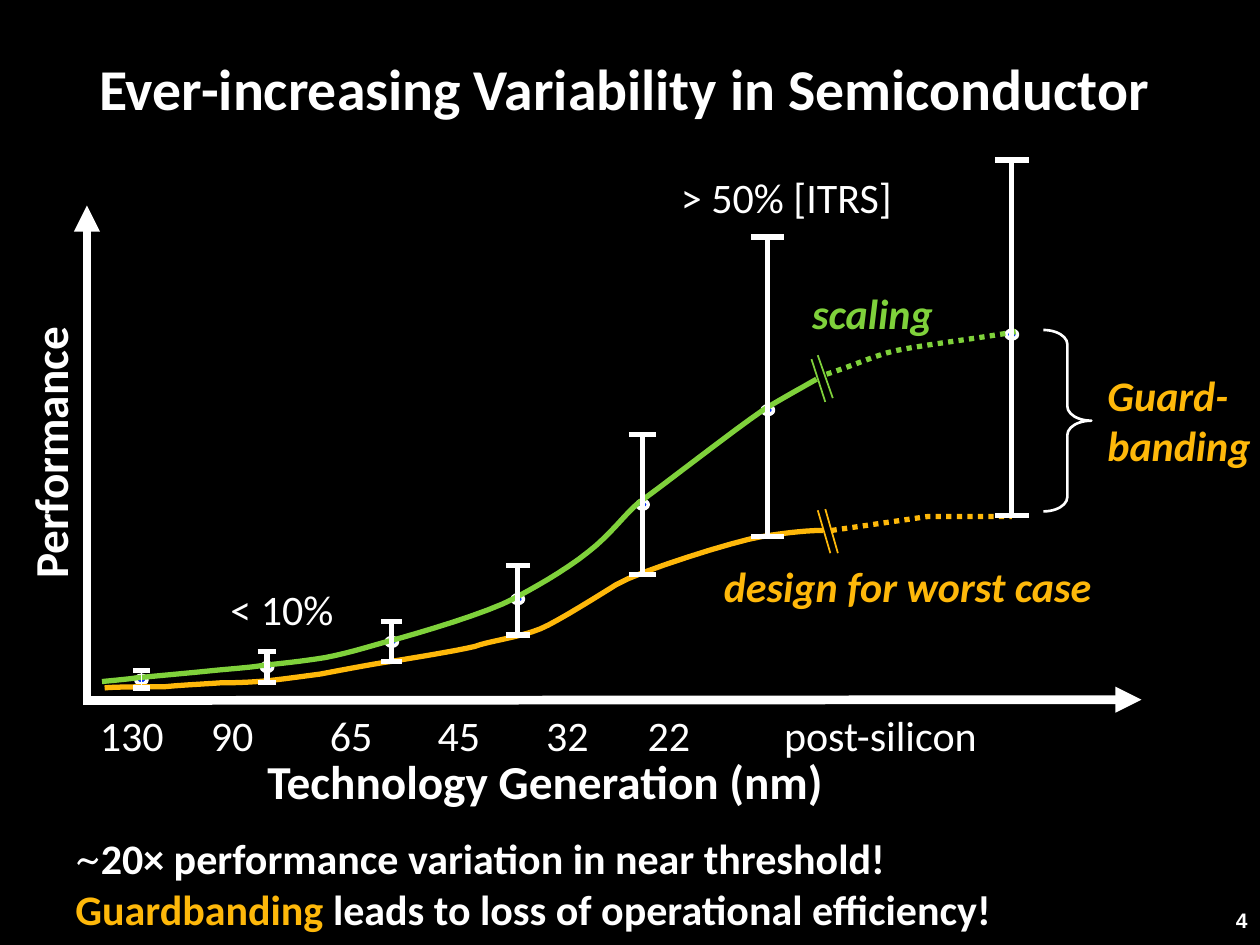
import pptx
import pptx.util
import pptx.dml.color
import pptx.enum.dml
import pptx.enum.shapes
import pptx.enum.text
import pptx.oxml
import pptx.oxml.ns

Pt = pptx.util.Pt
ALIGN = pptx.enum.text.PP_ALIGN
ANCHOR = pptx.enum.text.MSO_ANCHOR
SHAPE = pptx.enum.shapes.MSO_SHAPE

WHITE, ORANGE, GREEN, BLUE, BLACK = "FFFFFF", "FEB80A", "7FD13B", "0433FF", "000000"
FONT = "Calibri"
BOLD, SLANT = "b", "bi"

GENERATIONS = ["130", "90", "65", "45", "32", "22", "post-silicon"]
TAB_STOPS = [63.5, 131.5, 193, 255, 313, 391]

TEXTS = [
    dict(at=(49.7, 19.5, 620.6, 66), anchor=ANCHOR.MIDDLE, spacing=0.9,
         lines=[[("Ever-increasing Variability in Semiconductor", 33, WHITE, BOLD)]]),
    dict(at=(558, 511, 162, 29), anchor=ANCHOR.MIDDLE, align=ALIGN.RIGHT,
         lines=[[("4", 12, WHITE, BOLD, "Arial")]]),
    dict(at=(151, 430, 321, 32.4), anchor=ANCHOR.BOTTOM, align=ALIGN.CENTER, inset=False, wrap=False,
         lines=[[("Technology Generation (nm)", 27, WHITE, BOLD)]]),
    dict(at=(-44.6, 242.6, 145.4, 32.4), anchor=ANCHOR.BOTTOM, align=ALIGN.CENTER, inset=False,
         wrap=False, turn=270, lines=[[("Performance", 27, WHITE, BOLD)]]),
    dict(at=(57, 405.4, 505, 28.8), anchor=ANCHOR.BOTTOM, inset=False, tabs=TAB_STOPS,
         lines=[[("\t".join(GENERATIONS), 24, WHITE, "")]]),
    dict(at=(393, 320.4, 251.3, 28.8), anchor=ANCHOR.BOTTOM, align=ALIGN.CENTER, inset=False,
         lines=[[("design for worst case", 24, ORANGE, SLANT)]]),
    dict(at=(454.3, 164.2, 88.6, 28.8), anchor=ANCHOR.BOTTOM, align=ALIGN.CENTER, inset=False,
         lines=[[("scaling", 24, GREEN, SLANT)]]),
    dict(at=(36, 472.3, 615.6, 65.5),
         lines=[[("~", 24, WHITE, "", "TeX Gyre Adventor"),
                 ("20× performance variation in near threshold!", 24, WHITE, BOLD)],
                [("Guardbanding ", 24, ORANGE, BOLD),
                 ("leads to loss of operational efficiency!", 24, WHITE, BOLD)]]),
    dict(at=(124.6, 329.8, 85, 36), lines=[[("< 10%", 24, WHITE, "")]]),
    dict(at=(376.6, 94.3, 164.9, 36), lines=[[(" > 50% [ITRS]", 24, WHITE, "")]]),
    dict(at=(625.7, 207.4, 97.2, 65.5), wrap=False,
         lines=[[("Guard-", 24, ORANGE, SLANT)], [("banding", 24, ORANGE, SLANT)]]),
]

AXES = [((49.7, 117.4), (49.7, 400.3)), ((652.3, 399.8), (47.5, 400.3))]

# Each curve holds a start point, then two control points and an end point per segment.
WORST_CASE = [
    (59.8, 393.1), (64.8, 392.4), (90.7, 392.4), (94.3, 392.4),
    (100.8, 391.7), (113.8, 391), (126, 390.2), (137.5, 390.2), (148.3, 389.5), (154.8, 388.8),
    (161.3, 388.1), (182.9, 385.2), (182.9, 385.2), (182.9, 385.2), (216.7, 378.7), (223.2, 378),
    (236.9, 375.8), (259.2, 372.2), (271.4, 369.4), (278.6, 366.5), (296.6, 364.3), (308.9, 359.3),
    (319, 355), (346.3, 337.7), (352.1, 334.1), (363.6, 326.9), (420.5, 308.9), (434.9, 306.7),
    (443.5, 305.3), (458.6, 303.1), (470.2, 303.1),
]
SCALING = [
    (58.3, 389.5), (64.8, 388.8), (73.4, 388.1), (77.8, 387.4),
    (85.7, 386.6), (101.5, 385.2), (115.9, 383.8), (129.6, 382.3), (142.6, 381.6), (150.5, 380.2),
    (158.4, 379.4), (172.1, 378), (185.8, 375.8), (200.2, 373), (213.8, 368.6), (221.8, 366.5),
    (238.3, 362.2), (279.4, 349.9), (293.8, 342), (303.1, 337), (321.8, 326.9), (336.2, 315.4),
    (349.2, 305.3), (357.8, 293), (365, 287.3), (380.9, 275.8), (419.8, 245.5), (435.6, 234.7),
    (442.1, 230.4), (456.5, 222.5), (466.6, 216.7),
]
SCALING_AHEAD = [(472.3, 213.8), (483.8, 210.2), (499, 203.8), (506.9, 201.6),
                 (518.4, 198), (563, 193), (581, 189.4)]
WORST_CASE_AHEAD = [(475.2, 303.1), (529.9, 295.2), (578.2, 295.2)]

BREAKS = [
    ((467.3, 291.6), (474.5, 316.1), ORANGE), ((471.6, 290.9), (478.8, 316.1), ORANGE),
    ((463.7, 205.2), (471.6, 229.7), GREEN), ((467.3, 203), (475.9, 227.5), GREEN),
]

# Centre, top, typical value, bottom, half cap, stem width.
SPREADS = [
    (80.8, 383, 388.4, 393.1, 4.7, 1),
    (152.6, 372.2, 381.2, 390.2, 5.4, 3),
    (223.9, 355, 366.8, 378, 6.1, 3),
    (295.9, 323.3, 342.4, 362.9, 6.8, 3),
    (367.2, 248.4, 288.4, 328.3, 7.9, 3),
    (438.8, 135.4, 234.4, 306.7, 9.4, 3),
    (578.2, 91.4, 191.2, 294.5, 9.7, 3),
]
DOT_WIDTH, DOT_HEIGHT = 6.5, 5


def color(value):
    return pptx.dml.color.RGBColor.from_string(value)


def set_line(shape, value, width):
    shape.line.color.rgb = color(value)
    shape.line.width = Pt(width)


def add_line(page, start, end, value, width, arrow=False):
    line = page.shapes.add_connector(pptx.enum.shapes.MSO_CONNECTOR.STRAIGHT,
                                     *[Pt(number) for number in start + end])
    set_line(line, value, width)
    properties = line.element.spPr
    if arrow:
        head = pptx.oxml.ns.qn("a:headEnd")
        properties.find(pptx.oxml.ns.qn("a:ln")).makeelement(head)
        line.line._get_or_add_ln().append(properties.makeelement(head, {"type": "triangle"}))
    properties.append(properties.makeelement(pptx.oxml.ns.qn("a:effectLst")))


def flatten(curve, steps=8):
    points = [curve[0]]
    for first in range(0, len(curve) - 1, 3):
        a, b, c, d = curve[first:first + 4]
        for step in range(1, steps + 1):
            t = step / steps
            weights = ((1 - t) ** 3, 3 * t * (1 - t) ** 2, 3 * t * t * (1 - t), t ** 3)
            points.append(tuple(sum(w * p[axis] for w, p in zip(weights, (a, b, c, d)))
                                for axis in (0, 1)))
    return points


def add_outline(page, points, value, dotted=False):
    places = [(Pt(x), Pt(y)) for x, y in points]
    builder = page.shapes.build_freeform(*places[0], scale=1.0)
    builder.add_line_segments(places[1:], close=False)
    outline = builder.convert_to_shape()
    outline.shadow.inherit = False
    outline.fill.background()
    set_line(outline, value, 3)
    if dotted:
        outline.line.dash_style = pptx.enum.dml.MSO_LINE.ROUND_DOT


def add_text(page, at, lines, anchor=ANCHOR.TOP, align=ALIGN.LEFT, spacing=None,
             inset=True, wrap=True, turn=0, tabs=()):
    box = page.shapes.add_textbox(*[Pt(number) for number in at])
    box.rotation = turn
    frame = box.text_frame
    frame.word_wrap = wrap
    frame.vertical_anchor = anchor
    if not inset:
        frame.margin_left = frame.margin_right = frame.margin_top = frame.margin_bottom = 0
    for index, line in enumerate(lines):
        para = frame.paragraphs[0] if index == 0 else frame.add_paragraph()
        para.alignment = align
        para.line_spacing = spacing
        if tabs:
            properties = para._p.get_or_add_pPr()
            stops = properties.makeelement(pptx.oxml.ns.qn("a:tabLst"))
            properties.append(stops)
            for stop in tabs:
                stops.append(stops.makeelement(pptx.oxml.ns.qn("a:tab"),
                                               {"pos": str(Pt(stop)), "algn": "l"}))
        for words, size, value, style, *font in line:
            span = para.add_run()
            span.text = words
            span.font.name = font[0] if font else FONT
            span.font.size = Pt(size)
            span.font.color.rgb = color(value)
            span.font.bold = "b" in style
            span.font.italic = "i" in style


def main():
    deck = pptx.Presentation()
    deck.slide_width, deck.slide_height = Pt(720), Pt(540)
    page = deck.slides.add_slide(deck.slide_layouts[6])
    page.background.fill.solid()
    page.background.fill.fore_color.rgb = color(BLACK)

    for start, end in AXES:
        add_line(page, start, end, WHITE, 5, arrow=True)
    for x, top, middle, bottom, half, stem in SPREADS:
        dot = page.shapes.add_shape(SHAPE.OVAL, Pt(x - DOT_WIDTH / 2), Pt(middle - DOT_HEIGHT / 2),
                                    Pt(DOT_WIDTH), Pt(DOT_HEIGHT))
        dot.shadow.inherit = False
        dot.fill.solid()
        dot.fill.fore_color.rgb = color(BLUE)
        set_line(dot, WHITE, 2)

    add_outline(page, flatten(WORST_CASE), ORANGE)
    add_outline(page, WORST_CASE_AHEAD, ORANGE, dotted=True)
    add_outline(page, flatten(SCALING), GREEN)
    add_outline(page, flatten(SCALING_AHEAD), GREEN, dotted=True)
    for start, end, value in BREAKS:
        add_line(page, start, end, value, 1)
    for x, top, middle, bottom, half, stem in SPREADS:
        add_line(page, (x, top), (x, bottom), WHITE, stem)
        for y in (top, bottom):
            add_line(page, (x - half, y), (x + half, y), WHITE, 3)

    brace = page.shapes.add_shape(SHAPE.RIGHT_BRACE, Pt(596.2), Pt(188.6), Pt(27.4), Pt(103.7))
    brace.adjustments[0] = 0.3
    brace.shadow.inherit = False
    brace.fill.background()
    set_line(brace, WHITE, 1.5)

    for text in TEXTS:
        add_text(page, **text)
    deck.save("out.pptx")


if __name__ == "__main__":
    main()
